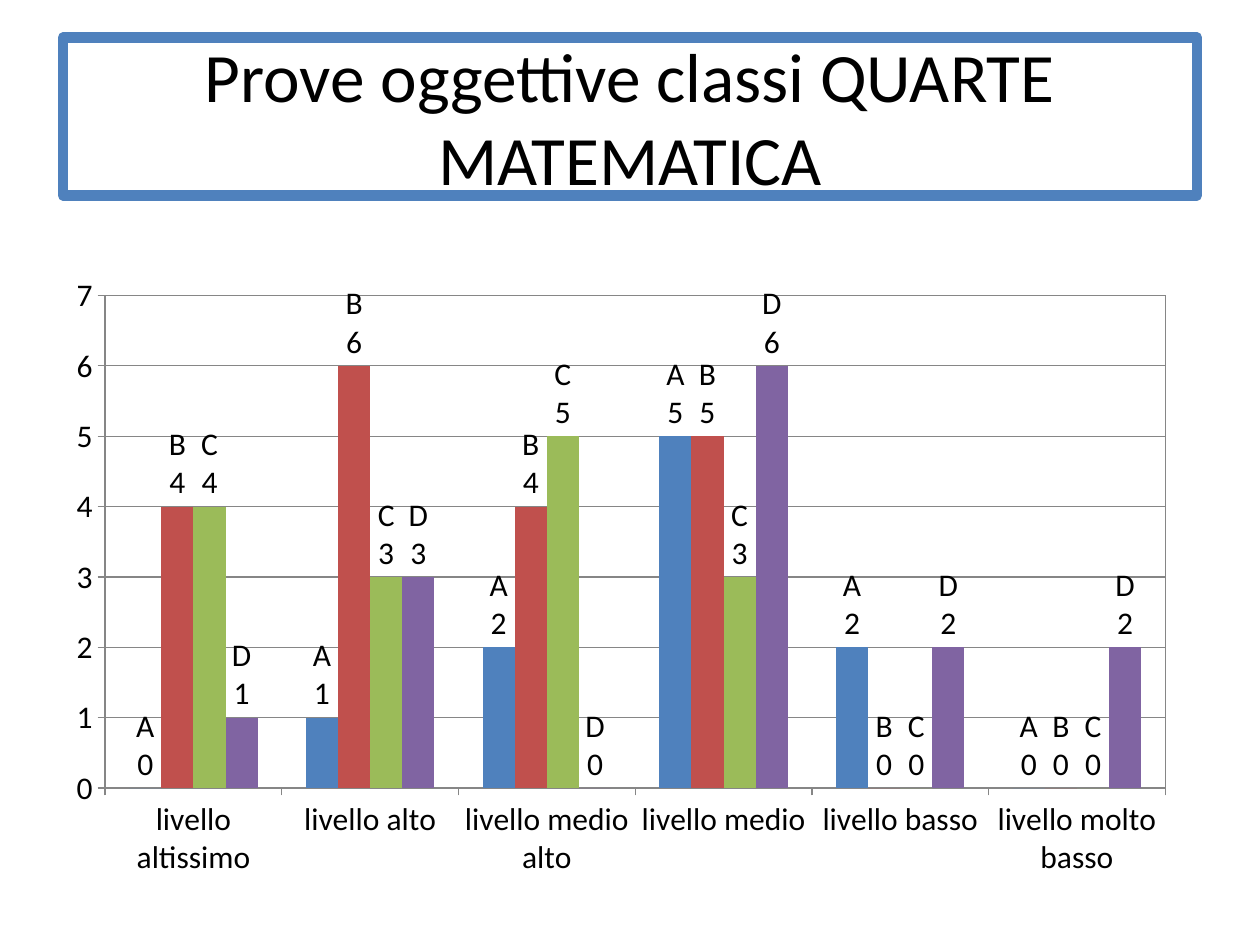
from lxml.etree import SubElement
from pptx import Presentation
from pptx.chart.data import CategoryChartData as ChartData
from pptx.dml.color import RGBColor
from pptx.enum.chart import XL_CHART_TYPE as ChartType
from pptx.enum.chart import XL_LABEL_POSITION as LabelPosition
from pptx.enum.chart import XL_TICK_MARK as TickMark
from pptx.enum.text import MSO_ANCHOR as Anchor
from pptx.enum.text import PP_ALIGN as Align
from pptx.oxml import parse_xml
from pptx.oxml.ns import nsdecls, qn
from pptx.util import Cm, Pt

BLACK = RGBColor(0x00, 0x00, 0x00)
WHITE = RGBColor(0xFF, 0xFF, 0xFF)
GRAY = RGBColor(0x86, 0x86, 0x86)
BLUE = RGBColor(0x4F, 0x81, 0xBD)
RED = RGBColor(0xC0, 0x50, 0x4D)
GREEN = RGBColor(0x9B, 0xBB, 0x59)
PURPLE = RGBColor(0x80, 0x64, 0xA2)

LEVELS = ["livello altissimo", "livello alto", "livello medio alto",
          "livello medio", "livello basso", "livello molto basso"]
CLASSES = [
    ("A", BLUE, (0, 1, 2, 5, 2, 0)),
    ("B", RED, (4, 6, 4, 5, 0, 0)),
    ("C", GREEN, (4, 3, 5, 3, 0, 0)),
    ("D", PURPLE, (1, 3, 0, 6, 2, 2)),
]


class SlideBuilder:
    font_name = "Calibri"
    title_size = Pt(39.6)
    chart_size = Pt(18)

    def __init__(self, deck):
        self.page = deck.slides.add_slide(deck.slide_layouts[6])
        self.page.background.fill.solid()
        self.page.background.fill.fore_color.rgb = WHITE

    def style_font(self, font, size):
        font.name = self.font_name
        font.size = size
        font.color.rgb = BLACK

    def title(self, lines, left, top, width, height):
        box = self.page.shapes.add_textbox(left, top, width, height)
        box.line.color.rgb = BLUE
        box.line.width = Pt(6)
        SubElement(box.line._get_or_add_ln(), qn("a:round"))
        frame = box.text_frame
        frame.word_wrap = True
        frame.vertical_anchor = Anchor.MIDDLE
        para = frame.paragraphs[0]
        para.alignment = Align.CENTER
        for index, line in enumerate(lines):
            if index:
                para.add_line_break()
            span = para.add_run()
            span.text = line
            self.style_font(span.font, self.title_size)

    def column_chart(self, categories, series, left, top, width, height):
        data = ChartData()
        data.categories = categories
        for name, _, values in series:
            data.add_series(name, values)
        chart = self.page.shapes.add_chart(
            ChartType.COLUMN_CLUSTERED, left, top, width, height, data).chart
        chart.has_legend = False
        chart.has_title = False
        self.style_font(chart.font, self.chart_size)
        plot = chart.plots[0]
        plot.gap_width = 150
        plot.overlap = 0
        plot.vary_by_categories = False
        for column, (_, color, _) in zip(plot.series, series):
            column.format.fill.solid()
            column.format.fill.fore_color.rgb = color
            self.series_labels(column.data_labels)
        self.axes(chart)
        self.plot_area(chart)

    def series_labels(self, labels):
        labels.show_value = True
        labels.show_series_name = True
        labels.position = LabelPosition.OUTSIDE_END
        self.style_font(labels.font, self.chart_size)
        separator = parse_xml(f"<c:separator {nsdecls('c')}>\n</c:separator>")
        labels._element.find(qn("c:showBubbleSize")).addnext(separator)

    def axes(self, chart):
        for axis in (chart.category_axis, chart.value_axis):
            axis.major_tick_mark = TickMark.OUTSIDE
            axis.minor_tick_mark = TickMark.NONE
            axis.format.line.color.rgb = GRAY
            self.style_font(axis.tick_labels.font, self.chart_size)
        scale = chart.value_axis
        scale.minimum_scale, scale.maximum_scale, scale.major_unit = 0, 7, 1
        scale.has_major_gridlines = True
        scale.major_gridlines.format.line.color.rgb = GRAY

    def plot_area(self, chart):
        area = chart._chartSpace.chart.plotArea
        for old in area.findall(qn("c:layout")):
            area.remove(old)
        area.insert(0, parse_xml(
            f"<c:layout {nsdecls('c')}><c:manualLayout>"
            '<c:layoutTarget val="inner"/>'
            '<c:xMode val="edge"/><c:yMode val="edge"/>'
            '<c:x val="0.045"/><c:y val="0.05"/>'
            '<c:w val="0.935"/><c:h val="0.79"/>'
            "</c:manualLayout></c:layout>"))
        area.append(parse_xml(
            f"<c:spPr {nsdecls('c', 'a')}><a:noFill/><a:ln><a:solidFill>"
            f'<a:srgbClr val="{GRAY}"/></a:solidFill></a:ln></c:spPr>'))


def main():
    deck = Presentation()
    deck.slide_width = Cm(25.4)
    deck.slide_height = Cm(19.05)
    builder = SlideBuilder(deck)
    builder.title(["Prove oggettive classi QUARTE", "MATEMATICA"],
                  Cm(1.27), Cm(0.76), Cm(22.86), Cm(3.18))
    builder.column_chart(LEVELS, CLASSES,
                         Cm(1.09), Cm(5.33), Cm(22.86), Cm(12.57))
    deck.save("out.pptx")


if __name__ == "__main__":
    main()
